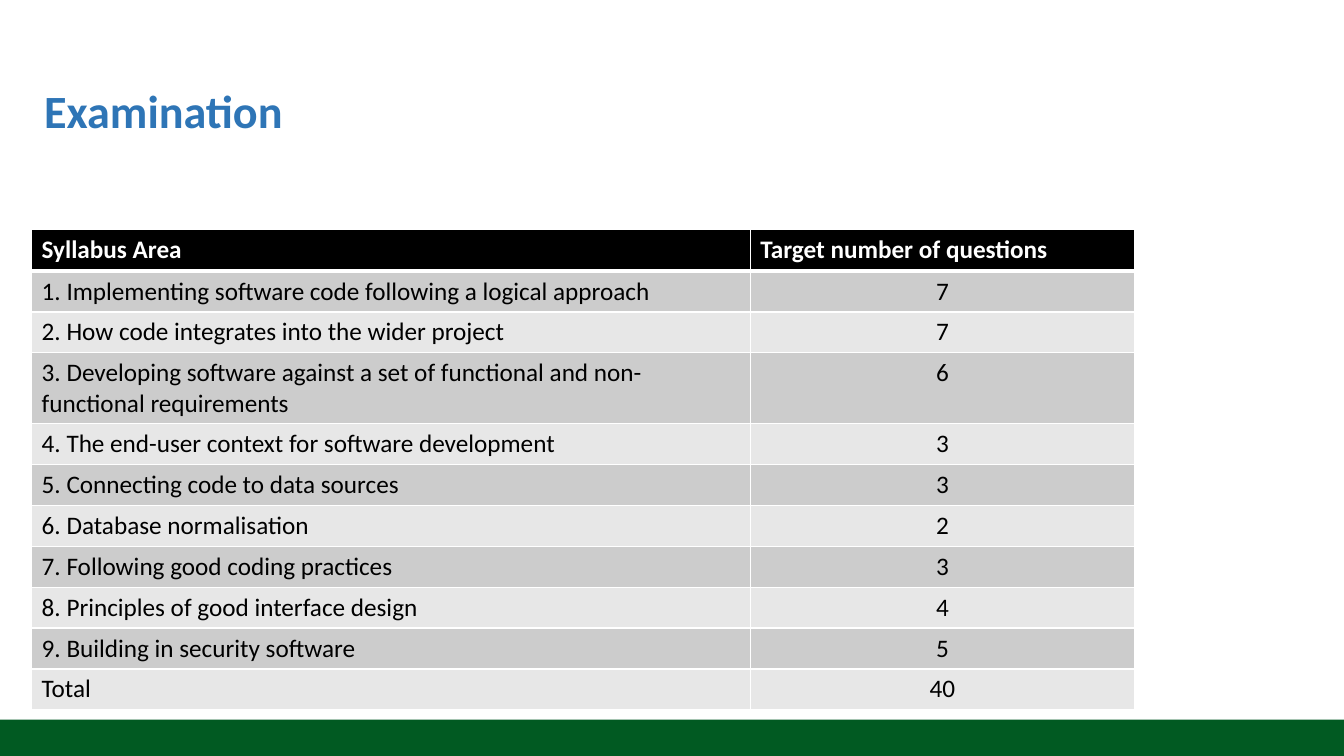
from lxml import etree
from pptx import Presentation
from pptx.dml.color import RGBColor
from pptx.enum.shapes import MSO_SHAPE as Shape
from pptx.enum.text import MSO_ANCHOR as Anchor, PP_ALIGN as Align
from pptx.oxml.ns import qn
from pptx.util import Pt

# Content
TITLE = "Examination"
HEADER = ("Syllabus Area", "Target number of questions")
AREAS = [
    ("1. Implementing software code following a logical approach", "7"),
    ("2. How code integrates into the wider project", "7"),
    ("3. Developing software against a set of functional and non-functional requirements", "6"),
    ("4. The end-user context for software development", "3"),
    ("5. Connecting code to data sources", "3"),
    ("6. Database normalisation", "2"),
    ("7. Following good coding practices", "3"),
    ("8. Principles of good interface design", "4"),
    ("9. Building in security software", "5"),
    ("Total", "40"),
]

# Layout and style, in points
SLIDE_WIDTH, SLIDE_HEIGHT = 960, 540
FOOTER_HEIGHT = 26
TABLE_LEFT, TABLE_TOP = 22.6, 163.6
COLUMN_WIDTHS = (513.3, 274.6)
HEADER_HEIGHT, ROW_HEIGHT = 30, 29.25
BANDS = ("CCCCCC", "E7E7E7")
FONT = "Calibri"


def color(value):
    return RGBColor.from_string(value)


def style_text(paragraph, size, value, bold=False):
    font = paragraph.runs[0].font
    font.name, font.size, font.bold = FONT, Pt(size), bold
    font.color.rgb = color(value)


def set_borders(cell, top, bottom):
    """Draw white borders; they must come before the fill in the cell XML."""
    properties = cell._tc.get_or_add_tcPr()
    widths = {"lnL": 1, "lnR": 1, "lnT": top, "lnB": bottom}
    for position, (tag, width) in enumerate(widths.items()):
        line = etree.Element(qn(f"a:{tag}"), w=str(Pt(width)))
        fill = etree.SubElement(line, qn("a:solidFill"))
        etree.SubElement(fill, qn("a:srgbClr"), val="FFFFFF")
        properties.insert(position, line)


presentation = Presentation()
presentation.slide_width, presentation.slide_height = Pt(SLIDE_WIDTH), Pt(SLIDE_HEIGHT)
slide = presentation.slides.add_slide(presentation.slide_layouts[6])

# Footer bar
footer = slide.shapes.add_shape(
    Shape.RECTANGLE, 0, Pt(SLIDE_HEIGHT - FOOTER_HEIGHT), Pt(SLIDE_WIDTH), Pt(FOOTER_HEIGHT))
footer.shadow.inherit = False
footer.fill.solid()
footer.fill.fore_color.rgb = color("015A22")
footer.line.fill.background()

# Title
title = slide.shapes.add_textbox(Pt(24.5), Pt(28.8), Pt(913), Pt(104.4))
frame = title.text_frame
frame.word_wrap = True
frame.vertical_anchor = Anchor.MIDDLE
frame.text = TITLE
frame.paragraphs[0].line_spacing = 0.9
style_text(frame.paragraphs[0], 33, "2E75B6", bold=True)

# Syllabus table
rows = [HEADER, *AREAS]
table = slide.shapes.add_table(
    len(rows), len(HEADER), Pt(TABLE_LEFT), Pt(TABLE_TOP), Pt(sum(COLUMN_WIDTHS)),
    Pt(HEADER_HEIGHT + ROW_HEIGHT * len(AREAS))).table
for column, width in zip(table.columns, COLUMN_WIDTHS):
    column.width = Pt(width)

for row_index, row in enumerate(rows):
    is_header = row_index == 0
    table.rows[row_index].height = Pt(HEADER_HEIGHT if is_header else ROW_HEIGHT)
    for column_index, text in enumerate(row):
        cell = table.cell(row_index, column_index)
        cell.text = text
        paragraph = cell.text_frame.paragraphs[0]
        style_text(paragraph, 18, "FFFFFF" if is_header else "000000", bold=is_header)
        if column_index == 1 and not is_header:
            paragraph.alignment = Align.CENTER
        cell.fill.solid()
        cell.fill.fore_color.rgb = color("000000" if is_header else BANDS[(row_index - 1) % 2])
        set_borders(cell, top=3 if row_index == 1 else 1, bottom=3 if is_header else 1)

presentation.save("out.pptx")
